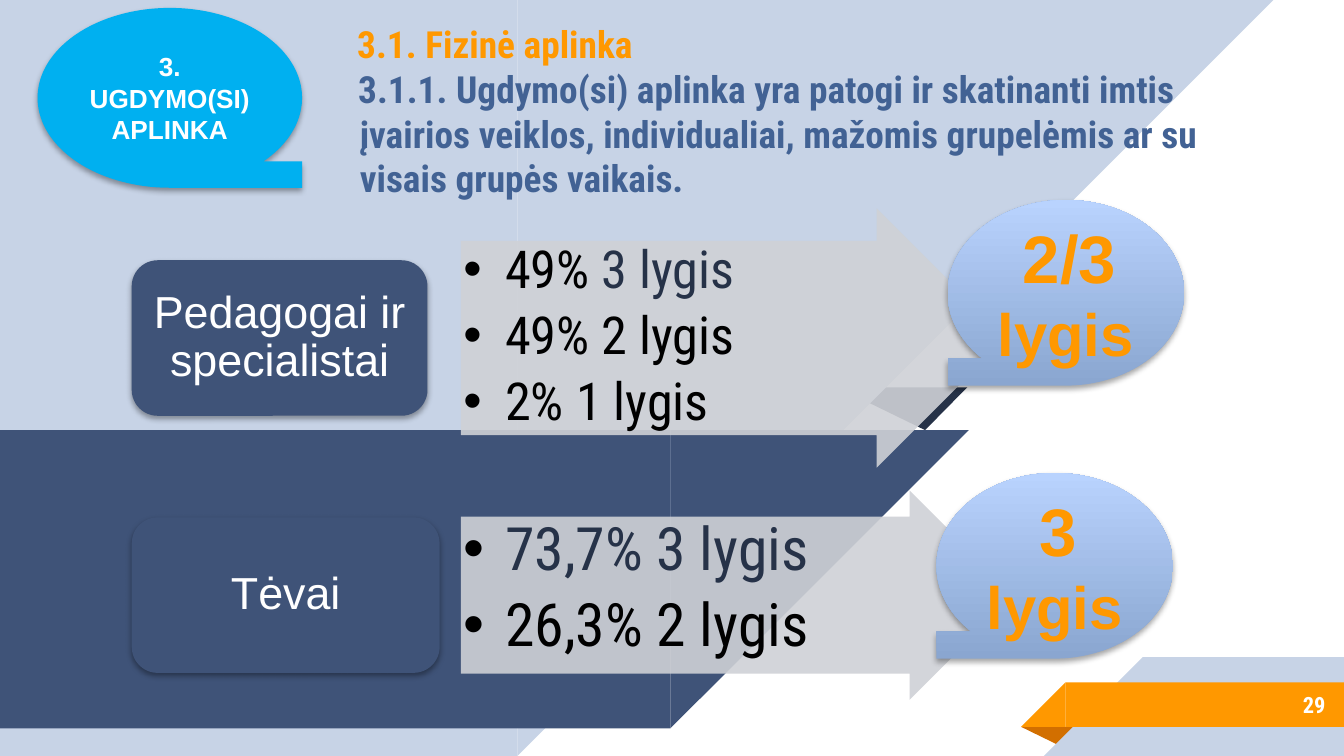
from lxml.etree import SubElement
from pptx import Presentation
from pptx.dml.color import RGBColor
from pptx.enum.shapes import MSO_SHAPE
from pptx.enum.text import MSO_ANCHOR, MSO_AUTO_SIZE, PP_ALIGN
from pptx.oxml.ns import qn
from pptx.util import Cm, Pt

COLORS = {
    "pale": "C7D3E6", "navy": "3F5378", "ink": "263248", "heading": "426294",
    "orange": "FF9800", "rust": "D26F00", "sky": "00B0F0", "arrow": "CFD1D6",
    "tape_dark": "8AA6D0", "tape_light": "B9D3FE", "white": "FFFFFF", "black": "000000",
}
CONDENSED, SANS = "Roboto Condensed", "Arial"


def rgb(name):
    return RGBColor.from_string(COLORS[name])


def add_block(slide, kind, box, fill=None, flip=None):
    """Borderless shape; box is left, top, width, height in cm."""
    block = slide.shapes.add_shape(kind, *map(Cm, box))
    block.shadow.inherit = False
    block.line.fill.background()
    if fill:
        block.fill.solid()
        block.fill.fore_color.rgb = rgb(fill)
    if flip:
        block._element.spPr.find(qn("a:xfrm")).set(flip, "1")
    return block


def add_alpha(color_element, percent):
    SubElement(color_element, qn("a:alpha"), val=str(percent * 1000))


def cast_shadow(block):
    effects = block._element.spPr.find(qn("a:effectLst"))
    shadow = SubElement(effects, qn("a:outerShdw"), blurRad=str(Pt(3.1)), dist=str(Pt(1.8)),
                        dir="5400000", rotWithShape="0")
    add_alpha(SubElement(shadow, qn("a:srgbClr"), val=COLORS["black"]), 35)


def set_frame(holder, anchor, inset=0.25):
    frame = holder.text_frame
    frame.word_wrap = True
    frame.auto_size = MSO_AUTO_SIZE.NONE
    frame.vertical_anchor = anchor
    frame.margin_left = frame.margin_right = Cm(inset)
    frame.margin_top = frame.margin_bottom = Cm(min(inset, 0.13))
    return frame


def add_run(paragraph, text, size, color, font, bold=False):
    run = paragraph.add_run()
    run.text = text
    run.font.size, run.font.name, run.font.bold = Pt(size), font, bold
    run.font.color.rgb = rgb(color)


def set_indent(paragraph, margin, first_line):
    properties = paragraph._p.get_or_add_pPr()
    properties.set("marL", str(Cm(margin)))
    properties.set("indent", str(Cm(first_line)))
    return properties


def add_bullet(paragraph):
    properties = set_indent(paragraph, 0.79, -0.79)
    color = SubElement(properties, qn("a:buClr"))
    SubElement(color, qn("a:srgbClr"), val=COLORS["black"])
    SubElement(properties, qn("a:buFont"), typeface=SANS)
    SubElement(properties, qn("a:buChar"), char="•")


def draw_background(slide, box):
    left, top, _, height = box
    fold = add_block(slide, MSO_SHAPE.ISOSCELES_TRIANGLE,
                     (left + 15.82, top + 7.32, 2.46, 0.81), "ink")
    fold.adjustments[0] = 0.324
    fold.rotation = 180
    # Each band is a rectangle that ends in a diagonal
    for fill, y, width, band_height in (("pale", 0, 9.78, height), ("navy", 8.13, 12.67, 5.64)):
        add_block(slide, MSO_SHAPE.RECTANGLE, (left, top + y, width, band_height), fill)
        add_block(slide, MSO_SHAPE.RIGHT_TRIANGLE,
                  (left + width, top + y, band_height, band_height), fill, "flipV")


def draw_footer(slide, box, number):
    left, top, width, height = box
    fold = add_block(slide, MSO_SHAPE.ISOSCELES_TRIANGLE,
                     (left, top + 1.32, 1.09, 0.36), "rust")
    fold.adjustments[0] = 0.324
    fold.rotation = 180
    for fill, x, y, side in (("pale", 0.43, 0, height), ("orange", 0, 0.48, 0.84)):
        add_block(slide, MSO_SHAPE.RECTANGLE,
                  (left + x + side, top + y, width - x - side, side), fill)
        add_block(slide, MSO_SHAPE.RIGHT_TRIANGLE, (left + x, top + y, side, side), fill, "flipH")
    # Page number
    page = slide.shapes.add_textbox(Cm(left + 1.86), Cm(top + 0.46), Cm(4.14), Cm(0.89))
    line = set_frame(page, MSO_ANCHOR.MIDDLE).paragraphs[0]
    line.alignment = PP_ALIGN.RIGHT
    add_run(line, number, 12, "white", CONDENSED, True)


def add_topic(slide, box, text):
    topic = add_block(slide, MSO_SHAPE.FLOWCHART_SEQUENTIAL_ACCESS_STORAGE, box, "sky")
    cast_shadow(topic)
    line = set_frame(topic, MSO_ANCHOR.MIDDLE).paragraphs[0]
    line.alignment = PP_ALIGN.CENTER
    add_run(line, text, 14, "white", SANS, True)


def fill_heading(slide, box, section, statement):
    heading = slide.placeholders[1]
    heading.left, heading.top, heading.width, heading.height = map(Cm, box)
    slide.shapes._spTree.append(heading._element)  # bring in front of the background
    frame = set_frame(heading, MSO_ANCHOR.TOP)
    frame.margin_top = Cm(0.25)
    lines = ((section, "orange", 1.27, -1.07), (statement, "heading", 0.25, -0.03))
    for index, (text, color, margin, first_line) in enumerate(lines):
        line = frame.add_paragraph() if index else frame.paragraphs[0]
        line.alignment = PP_ALIGN.LEFT
        line.space_before = Pt(0)
        set_indent(line, margin, first_line)
        add_run(line, text, 20, color, CONDENSED, True)


def add_rating(slide, box, level):
    rating = add_block(slide, MSO_SHAPE.FLOWCHART_SEQUENTIAL_ACCESS_STORAGE, box, flip="flipH")
    rating.fill.gradient()
    rating.fill.gradient_angle = 90
    for stop, color in zip(rating.fill.gradient_stops, ("tape_dark", "tape_light")):
        stop.color.rgb = rgb(color)
    cast_shadow(rating)
    line = set_frame(rating, MSO_ANCHOR.MIDDLE).paragraphs[0]
    line.alignment = PP_ALIGN.CENTER
    for text, size in ((" ", 14), (level, 36), (" lygis", 32)):
        add_run(line, text, size, "orange", SANS, True)


def add_respondents(slide, box, group, group_width, answers, size, level, rating_offset):
    left, top, width, height = box
    # Arrow with the shares of answers
    arrow = add_block(slide, MSO_SHAPE.RIGHT_ARROW,
                      (left + 6.22, top, width - 6.22, height), "arrow")
    arrow.adjustments[0], arrow.adjustments[1] = 0.75, 0.5
    add_alpha(arrow._element.spPr.find(qn("a:solidFill"))[0], 90)
    frame = set_frame(arrow, MSO_ANCHOR.TOP, 0.05)
    for index, answer in enumerate(answers):
        line = frame.add_paragraph() if index else frame.paragraphs[0]
        line.level = 1
        line.alignment = PP_ALIGN.LEFT
        line.line_spacing = 0.9
        line.space_after = Pt(round(size * 0.18))
        add_bullet(line)
        for text, color in answer:
            add_run(line, text, size, color, CONDENSED)
    # Name of the group
    label = add_block(slide, MSO_SHAPE.ROUNDED_RECTANGLE,
                      (left, top + (height - 2.94) / 2, group_width, 2.94), "navy")
    cast_shadow(label)
    line = set_frame(label, MSO_ANCHOR.MIDDLE, 0.13).paragraphs[0]
    line.alignment = PP_ALIGN.CENTER
    line.line_spacing = 0.9
    add_run(line, group, 24, "white", SANS)
    # Overall level at the arrow's tip
    dx, dy = rating_offset
    add_rating(slide, (left + width + dx, top + dy, 4.47, 3.51), level)


def main():
    deck = Presentation()
    deck.slide_width, deck.slide_height = Cm(25.4), Cm(14.29)
    slide = deck.slides.add_slide(deck.slide_layouts[0])
    title = slide.shapes.title._element
    title.getparent().remove(title)

    draw_background(slide, (0, 0, 25.4, 14.29))
    draw_footer(slide, (19.3, 12.42, 6.1, 1.87), "29")
    add_topic(slide, (0.71, 0.15, 5, 3.4), "3. UGDYMO(SI) APLINKA")
    fill_heading(slide, (6.3, 0.15, 17.2, 2.57), "3.1. Fizinė aplinka",
                 "3.1.1. Ugdymo(si) aplinka yra patogi ir skatinanti imtis įvairios veiklos, "
                 "individualiai, mažomis grupelėmis ar su visais grupės vaikais.")
    add_respondents(slide, (2.49, 3.94, 16.53, 4.9), "Pedagogai ir specialistai", 5.59,
                    ([("49%", "black"), (" 3 lygis", "ink")],
                     [("49% 2 lygis", "black")],
                     [("2% 1 lygis", "black")]), 28, "2/3", (-1.11, -0.16))
    add_respondents(slide, (2.49, 9.27, 16.68, 3.96), "Tėvai", 5.82,
                    ([("73,7% 3 lygis", "ink")],
                     [("26,3% 2 lygis", "black")]), 32, "3", (-1.47, -0.33))
    deck.save("out.pptx")


if __name__ == "__main__":
    main()
